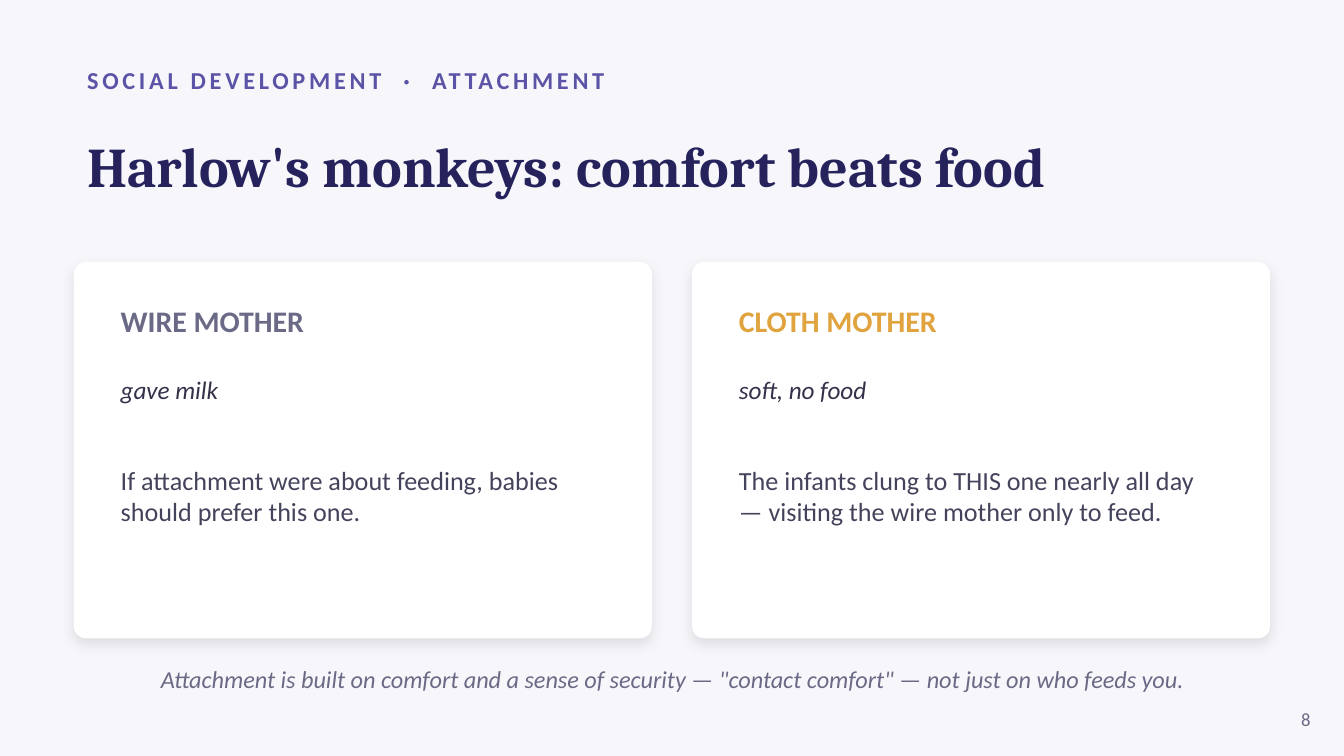
from lxml import etree
from pptx import Presentation
from pptx.dml.color import RGBColor
from pptx.enum.shapes import MSO_SHAPE
from pptx.enum.text import MSO_ANCHOR, PP_ALIGN
from pptx.oxml.ns import qn
from pptx.util import Inches, Pt

ROUND_RECT = MSO_SHAPE.ROUNDED_RECTANGLE
TOP, MIDDLE = MSO_ANCHOR.TOP, MSO_ANCHOR.MIDDLE
LEFT, CENTER, RIGHT = PP_ALIGN.LEFT, PP_ALIGN.CENTER, PP_ALIGN.RIGHT

# Content
KICKER = "SOCIAL DEVELOPMENT  ·  ATTACHMENT"
TITLE = "Harlow's monkeys: comfort beats food"
CARDS = [
    ("WIRE MOTHER", "6B6A86", "gave milk",
     "If attachment were about feeding, babies should prefer this one."),
    ("CLOTH MOTHER", "E0A33E", "soft, no food",
     "The infants clung to THIS one nearly all day — visiting the wire mother only to feed."),
]
TAKEAWAY = ('Attachment is built on comfort and a sense of security — '
            '"contact comfort" — not just on who feeds you.')
PAGE = "8"

# Layout, in inches
SLIDE_W = 10
SLIDE_H = SLIDE_W * 9 / 16
MARGIN, GAP = 0.55, 0.3
CARD_TOP, CARD_W, CARD_H = 1.95, 4.3, 2.8
PAD = 0.25
MUTED = "6B6A86"


def rgb(value):
    return RGBColor.from_string(value)


def add_paragraph(tf, text, size, color, font="Calibri", bold=False, italic=False,
                  align=LEFT, before=0, tracking=0):
    p = tf.add_paragraph() if tf.text else tf.paragraphs[0]
    p.alignment = align
    if before:
        p.space_before = Pt(before)
    r = p.add_run()
    r.text = text
    r.font.name, r.font.size = font, Pt(size)
    r.font.bold, r.font.italic = bold, italic
    r.font.color.rgb = rgb(color)
    if tracking:
        r.font._element.set("spc", str(tracking * 100))


def add_box(s, x, y, w, h, anchor=MIDDLE):
    tf = s.shapes.add_textbox(*map(Inches, (x, y, w, h))).text_frame
    tf.word_wrap = True
    tf.vertical_anchor = anchor
    return tf


def add_card(s, x, y, w, h):
    sp = s.shapes.add_shape(ROUND_RECT, *map(Inches, (x, y, w, h)))
    sp.adjustments[0] = 0.032
    sp.fill.solid()
    sp.fill.fore_color.rgb = rgb("FFFFFF")
    sp.line.fill.background()
    # Soft shadow straight down
    sp.shadow.inherit = False
    effects = sp._element.spPr.find(qn("a:effectLst"))
    shadow = etree.SubElement(effects, qn("a:outerShdw"), blurRad=str(Pt(7)),
                              dist=str(Pt(3)), dir=str(90 * 60000),
                              algn="bl", rotWithShape="0")
    color = etree.SubElement(shadow, qn("a:srgbClr"), val="000000")
    etree.SubElement(color, qn("a:alpha"), val="10000")


prs = Presentation()
prs.slide_width, prs.slide_height = Inches(SLIDE_W), Inches(SLIDE_H)
s = prs.slides.add_slide(prs.slide_layouts[6])
s.background.fill.solid()
s.background.fill.fore_color.rgb = rgb("F7F7FB")

# Heading
add_paragraph(add_box(s, MARGIN, 0.42, 9, 0.35), KICKER, 13, "5B53A6",
              bold=True, tracking=2)
add_paragraph(add_box(s, MARGIN, 0.78, 8.9, 0.9), TITLE, 30, "26235C",
              font="Cambria", bold=True)

# Cards
for i, (name, color, trait, finding) in enumerate(CARDS):
    x = MARGIN + i * (CARD_W + GAP)
    add_card(s, x, CARD_TOP, CARD_W, CARD_H)
    tf = add_box(s, x + PAD, CARD_TOP + PAD, CARD_W - 2 * PAD, 2.45, TOP)
    add_paragraph(tf, name, 16, color, bold=True)
    add_paragraph(tf, trait, 13.5, "33324A", italic=True, before=19.5)
    add_paragraph(tf, finding, 14, "44435C", before=32)

# Takeaway and page number
add_paragraph(add_box(s, MARGIN, 4.85, 8.9, 0.4), TAKEAWAY, 13, MUTED,
              italic=True, align=CENTER)
add_paragraph(add_box(s, 9.35, 5.2, 0.5, 0.3), PAGE, 10, MUTED, align=RIGHT)

prs.save("out.pptx")
